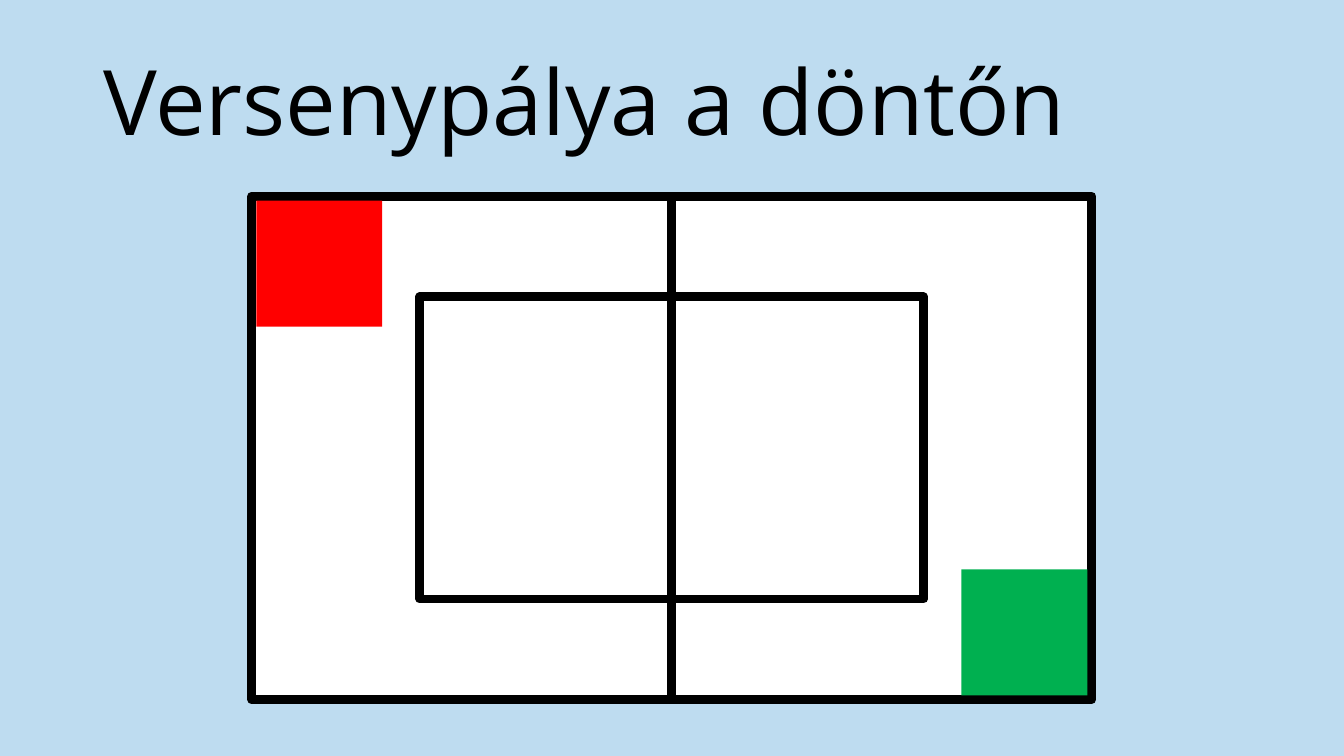
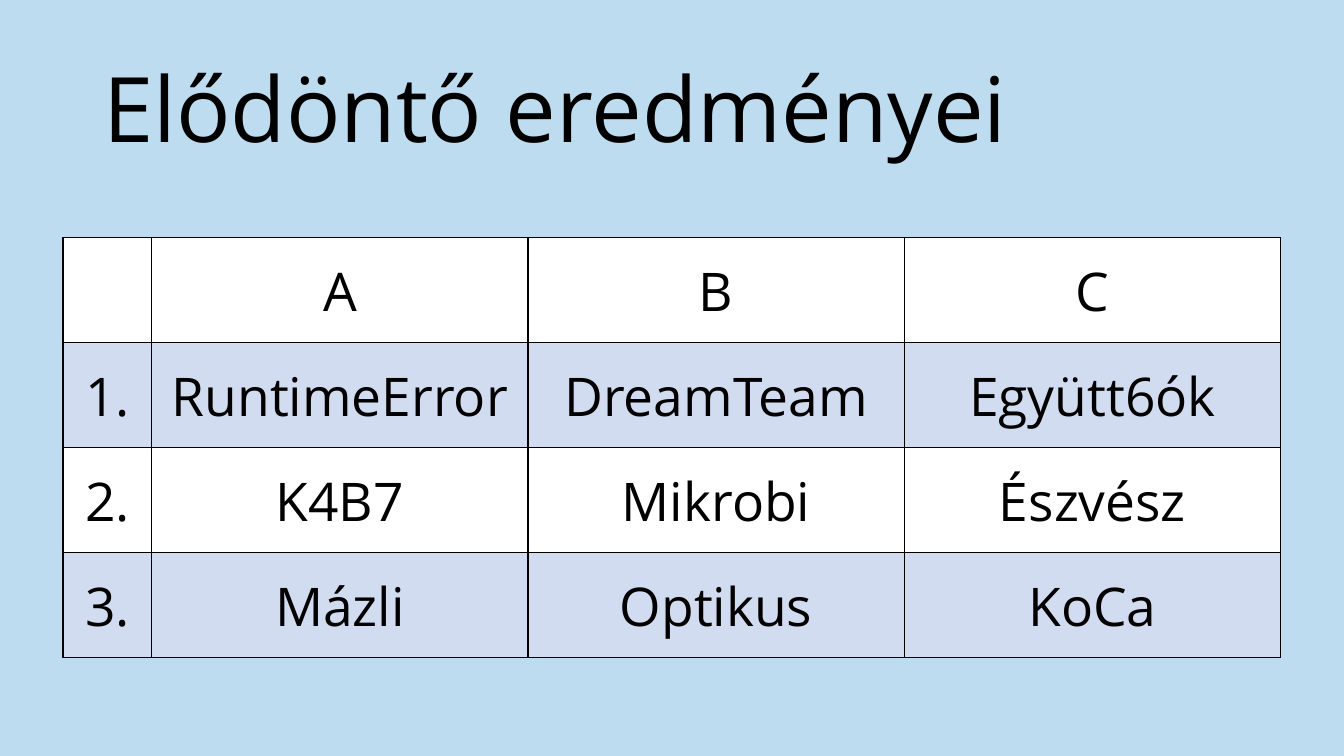
"""Build the two robot contest slides: the final's arena and the semi-final results."""
from dataclasses import dataclass

from lxml import etree
from pptx import Presentation
from pptx import util as u
from pptx.dml.color import RGBColor
from pptx.enum import shapes, text
from pptx.oxml.ns import qn


@dataclass(frozen=True)
class Theme:
    font: str = "Open Sans"
    title_size: float = 61
    cell_size: float = 36
    ink: RGBColor = RGBColor(0x00, 0x00, 0x00)
    paper: RGBColor = RGBColor(0xFF, 0xFF, 0xFF)
    background: RGBColor = RGBColor(0xBE, 0xDC, 0xF0)
    band: RGBColor = RGBColor(0xD2, 0xDC, 0xF0)
    red: RGBColor = RGBColor(0xFF, 0x00, 0x00)
    green: RGBColor = RGBColor(0x00, 0xB0, 0x50)
    wall: float = 6
    border: float = 1


theme = Theme()


def write(frame, wording, *, size, align=text.PP_ALIGN.LEFT, spacing=1.0):
    """Put one formatted paragraph into a text frame."""
    frame.word_wrap = True
    para = frame.paragraphs[0]
    para.alignment = align
    para.line_spacing = spacing
    span = para.add_run()
    span.text = wording
    span.font.name = theme.font
    span.font.size = u.Pt(size)
    span.font.color.rgb = theme.ink


deck = Presentation()
deck.slide_width, deck.slide_height = u.Pt(907.2), u.Pt(510.48)
fill = deck.slide_master.background.fill
fill.solid()
fill.fore_color.rgb = theme.background

pages = []
for title, top in (("Versenypálya a döntőn", 22.3), ("Elődöntő eredményei", 27.4)):
    page = deck.slides.add_slide(deck.slide_layouts[6])
    box = page.shapes.add_textbox(u.Pt(62.6), u.Pt(top), u.Pt(782.6), u.Pt(98.6))
    box.text_frame.vertical_anchor = text.MSO_ANCHOR.MIDDLE
    write(box.text_frame, title, size=theme.title_size, spacing=0.9)
    pages.append(page)
arena_page, results_page = pages

left, top, width, height = 170, 132.5, 567, 340
zone, inset = 85, theme.wall / 2
inner_width, inner_height = 340, 204
arena = arena_page.shapes.add_group_shape()
rectangles = []
for x, y, w, h, color, walled in (
    (left, top, width, height, theme.paper, True),
    (left + inset, top + inset, zone, zone, theme.red, False),
    (left + width - inset - zone, top + height - inset - zone, zone, zone, theme.green, False),
    (left + (width - inner_width) / 2, top + (height - inner_height) / 2,
     inner_width, inner_height, theme.paper, True),
):
    rectangle = arena.shapes.add_shape(
        shapes.MSO_SHAPE.RECTANGLE, u.Pt(x), u.Pt(y), u.Pt(w), u.Pt(h))
    rectangle.shadow.inherit = False
    rectangle.fill.solid()
    rectangle.fill.fore_color.rgb = color
    if walled:
        rectangle.line.color.rgb = theme.ink
        rectangle.line.width = u.Pt(theme.wall)
    else:
        rectangle.line.fill.background()
    rectangles.append(rectangle)

court = rectangles[0]
middle = u.Pt(left + width / 2)
halfway = arena.shapes.add_connector(
    shapes.MSO_CONNECTOR.STRAIGHT, middle, u.Pt(top), middle, u.Pt(top + height))
halfway.begin_connect(court, 0)
halfway.end_connect(court, 2)
halfway.line.color.rgb = theme.ink
halfway.line.width = u.Pt(theme.wall)
etree.SubElement(halfway.element.spPr, qn("a:effectLst"))

results = (
    ("", "A", "B", "C"),
    ("1.", "RuntimeError", "DreamTeam", "Együtt6ók"),
    ("2.", "K4B7", "Mikrobi", "Észvész"),
    ("3.", "Mázli", "Optikus", "KoCa"),
)
column_widths = (60, 254, 254, 254)
row_height = 70.9
table = results_page.shapes.add_table(
    len(results), len(column_widths), u.Pt(42.5), u.Pt(160.6),
    u.Pt(sum(column_widths)), u.Pt(row_height * len(results))).table
table.first_row = table.horz_banding = False
for column, column_width in zip(table.columns, column_widths):
    column.width = u.Pt(column_width)
for r, names in enumerate(results):
    table.rows[r].height = u.Pt(row_height)
    for c, name in enumerate(names):
        cell = table.cell(r, c)
        cell.fill.solid()
        cell.fill.fore_color.rgb = theme.band if r % 2 else theme.paper
        cell.vertical_anchor = text.MSO_ANCHOR.MIDDLE
        cell.margin_left = cell.margin_right = cell.margin_top = u.Pt(0.7)
        cell.margin_bottom = 0
        if name:
            write(cell.text_frame, name, size=theme.cell_size, align=text.PP_ALIGN.CENTER)
        properties = cell._tc.get_or_add_tcPr()
        for position, side in enumerate(("lnL", "lnR", "lnT", "lnB")):
            edge = etree.Element(qn(f"a:{side}"), w=str(u.Pt(theme.border)))
            paint = etree.SubElement(edge, qn("a:solidFill"))
            etree.SubElement(paint, qn("a:srgbClr"), val=str(theme.ink))
            properties.insert(position, edge)

deck.save("out.pptx")
